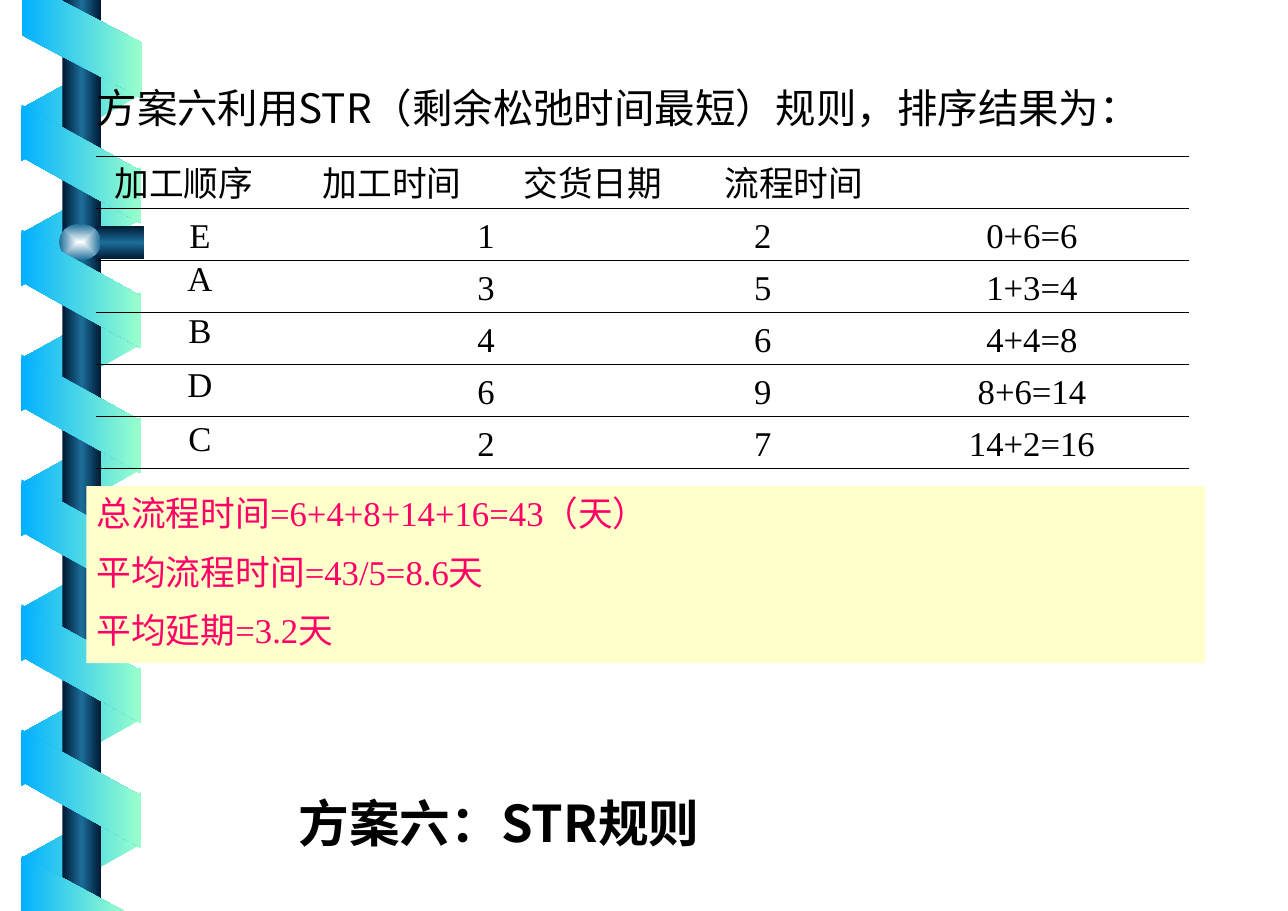
from lxml import etree
from pptx import Presentation
from pptx.dml.color import RGBColor
from pptx.enum.shapes import MSO_SHAPE
from pptx.enum.text import MSO_ANCHOR, PP_ALIGN
from pptx.oxml import parse_xml
from pptx.oxml.ns import nsdecls, qn
from pptx.util import Inches, Pt

# Content
TITLE = "方案六：STR规则"
INTRO = "方案六利用STR（剩余松弛时间最短）规则，排序结果为："
HEADINGS = ["加工顺序", "加工时间", "交货日期", "流程时间"]
JOBS = [
    ("E", "1", "2", "0+6=6"),
    ("A", "3", "5", "1+3=4"),
    ("B", "4", "6", "4+4=8"),
    ("D", "6", "9", "8+6=14"),
    ("C", "2", "7", "14+2=16"),
]
RESULTS = ["总流程时间=6+4+8+14+16=43（天）", "平均流程时间=43/5=8.6天", "平均延期=3.2天"]

COLORS = {"text": "000000", "result": "FF0066", "panel": "FFFFCC", "navy": "001932",
          "steel": "1C6D9A", "shine": "FEFFFF", "blue": "01B0FF", "mint": "99FFCC"}
SANS, SERIF, TITLE_FONT = "Noto Sans CJK SC", "Times New Roman", "Noto Sans CJK JP"
FORMATS = {
    "title": {"size": Pt(35), "bold": True, "name": TITLE_FONT},
    "intro": {"size": Pt(28), "name": SANS},
    "heading": {"size": Pt(24), "name": SANS},
    "body": {"size": Pt(24), "name": SERIF},
}

# Layout, in inches
SLIDE_WIDTH, SLIDE_HEIGHT = 12 + 3 / 8, 8.75
TABLE_LEFT, TABLE_TOP, ROW_HEIGHT = 0.92, 1.5, 0.5
COLUMN_WIDTHS = [2, 3.5, 1.82, 3.18]
LAST_COLUMN_INDENT = 0.17
HEADING_INDENT, HEADING_TABS = 0.18, [2, 3.93, 5.86]
JOB_INSETS = [0.09, 0, 0, 0.02, 0.04]
VALUE_INSET = 0.09
RIBBON_LEFT, RIBBON_SIZE, RIBBON_STEP = 0.21, (1.14, 1.15), 1.2
RIBBON_TOP_END = [(0.21, 0), (0.21, 0.34), (1.36, 0.94), (1.36, 0.41), (0.58, 0)]
RIBBON_BOTTOM_END = [(1.19, 8.75), (0.21, 8.22), (0.2, 8.75)]

prs = Presentation()
prs.slide_width = Inches(SLIDE_WIDTH)
prs.slide_height = Inches(SLIDE_HEIGHT)
slide = prs.slides.add_slide(prs.slide_layouts[6])
shapes = slide.shapes


def finish(shape):
    shape.shadow.inherit = False
    shape.line.fill.background()
    return shape


def add_preset(kind, left, top, width, height):
    return finish(shapes.add_shape(kind, *map(Inches, (left, top, width, height))))


def paint_gradient(shape, names, angle=None):
    """Spread the named colours evenly; without an angle they run from the centre."""
    stops = "".join(
        f'<a:gs pos="{100000 * i // (len(names) - 1)}"><a:srgbClr val="{COLORS[name]}"/></a:gs>'
        for i, name in enumerate(names))
    if angle is None:
        course = ('<a:path path="shape"><a:fillToRect l="50000" t="50000" r="50000" '
                  'b="50000"/></a:path>')
    else:
        course = f'<a:lin ang="{angle * 60000}" scaled="0"/>'
    gradient = parse_xml(f'<a:gradFill {nsdecls("a")} rotWithShape="0"><a:gsLst>{stops}</a:gsLst>'
                         f'{course}</a:gradFill>')
    shape._element.spPr.find(qn("a:prstGeom" if shape._element.spPr.prstGeom is not None
                                else "a:custGeom")).addnext(gradient)


def add_ribbon(top, rotation, names, flipped=False):
    ribbon = add_preset(MSO_SHAPE.PARALLELOGRAM, RIBBON_LEFT, top, *RIBBON_SIZE)
    ribbon.adjustments[0] = 0.56
    ribbon.rotation = rotation
    if flipped:
        ribbon._element.spPr.xfrm.set("flipH", "1")
    paint_gradient(ribbon, names, 0)


def write(paragraph, text, style, color="text"):
    run = paragraph.add_run()
    run.text = text
    for attribute, value in FORMATS[style].items():
        setattr(run.font, attribute, value)
    run.font.color.rgb = RGBColor.from_string(COLORS[color])
    east_asian = TITLE_FONT if style == "title" else SANS
    etree.SubElement(run._r.get_or_add_rPr(), qn("a:ea"), typeface=east_asian)


def add_text(text, style, left, top, width, height, anchor):
    frame = shapes.add_textbox(*map(Inches, (left, top, width, height))).text_frame
    frame.word_wrap = True
    frame.vertical_anchor = anchor
    write(frame.paragraphs[0], text, style)
    return frame


def rule_cell(cell):
    """Draw the lines above and below a cell and leave its sides open."""
    cell.fill.background()
    properties = cell._tc.get_or_add_tcPr()
    for i, side in enumerate(("lnL", "lnR", "lnT", "lnB")):
        paint = (f'<a:solidFill><a:srgbClr val="{COLORS["text"]}"/></a:solidFill>'
                 if side in ("lnT", "lnB") else "<a:noFill/>")
        properties.insert(i, parse_xml(f'<a:{side} {nsdecls("a")} w="12700">{paint}</a:{side}>'))


# Ribbons behind the rod
for i in range(7):
    add_ribbon(0.4 + i * RIBBON_STEP, 90, ["mint", "blue"], flipped=True)

# Rod, peg and knob
rod = add_preset(MSO_SHAPE.RECTANGLE, 0.6, 0, 0.37, SLIDE_HEIGHT)
paint_gradient(rod, ["navy", "steel", "navy"], 0)
peg = add_preset(MSO_SHAPE.PENTAGON, 0.74, 2.17, 0.64, 0.32)
peg.adjustments[0] = 0.62
peg._element.spPr.xfrm.set("flipH", "1")
paint_gradient(peg, ["navy", "steel", "navy"], 90)
knob = add_preset(MSO_SHAPE.OVAL, 0.57, 2.15, 0.4, 0.35)
paint_gradient(knob, ["shine", "steel"])

# Ribbons in front of the rod, with cut ends at the slide edges
for i in range(6):
    add_ribbon(1 + i * RIBBON_STEP, 270, ["blue", "mint"])
for outline in (RIBBON_TOP_END, RIBBON_BOTTOM_END):
    points = [(Inches(x), Inches(y)) for x, y in outline]
    builder = shapes.build_freeform(*points[0])
    builder.add_line_segments(points[1:], close=True)
    paint_gradient(finish(builder.convert_to_shape()), ["blue", "mint"], 0)

# Title and introduction
add_text(TITLE, "title", 2.75, 7.41, 7.58, 0.83, MSO_ANCHOR.BOTTOM).margin_left = Inches(0.12)
add_text(INTRO, "intro", 0.83, 0.75, 10.92, 0.57, MSO_ANCHOR.TOP)

# Schedule table
schedule = shapes.add_table(
    len(JOBS) + 1, len(HEADINGS), Inches(TABLE_LEFT), Inches(TABLE_TOP),
    Inches(sum(COLUMN_WIDTHS)), Inches(ROW_HEIGHT * (len(JOBS) + 1))).table
schedule.first_row = schedule.horz_banding = False
for column, width in zip(schedule.columns, COLUMN_WIDTHS):
    column.width = Inches(width)
for row in schedule.rows:
    row.height = Inches(ROW_HEIGHT)
for cell in schedule.iter_cells():
    rule_cell(cell)
    cell.margin_left = cell.margin_right = cell.margin_top = cell.margin_bottom = 0

heading = schedule.cell(0, 0)
heading.merge(schedule.cell(0, len(HEADINGS) - 1))
heading.margin_left = Inches(HEADING_INDENT)
heading.vertical_anchor = MSO_ANCHOR.TOP
heading_line = heading.text_frame.paragraphs[0]
tabs = etree.SubElement(heading_line._p.get_or_add_pPr(), qn("a:tabLst"))
for position in HEADING_TABS:
    etree.SubElement(tabs, qn("a:tab"), pos=str(Inches(position)), algn="l")
write(heading_line, "\t".join(HEADINGS), "heading")

for r, (job, job_inset) in enumerate(zip(JOBS, JOB_INSETS), start=1):
    for c, value in enumerate(job):
        cell = schedule.cell(r, c)
        cell.margin_top = Inches(VALUE_INSET if c else job_inset)
        cell.margin_left = Inches(LAST_COLUMN_INDENT if c == len(job) - 1 else 0)
        cell.text_frame.paragraphs[0].alignment = PP_ALIGN.CENTER
        write(cell.text_frame.paragraphs[0], value, "body")

# Results panel
panel = add_preset(MSO_SHAPE.RECTANGLE, 0.83, 4.67, 10.75, 1.7)
panel.fill.solid()
panel.fill.fore_color.rgb = RGBColor.from_string(COLORS["panel"])
results = panel.text_frame
results.word_wrap = True
results.vertical_anchor = MSO_ANCHOR.TOP
for i, result in enumerate(RESULTS):
    line = results.add_paragraph() if i else results.paragraphs[0]
    line.alignment = PP_ALIGN.LEFT
    if i:
        line.space_before = Pt(12)
    write(line, result, "body", "result")

prs.save("out.pptx")
